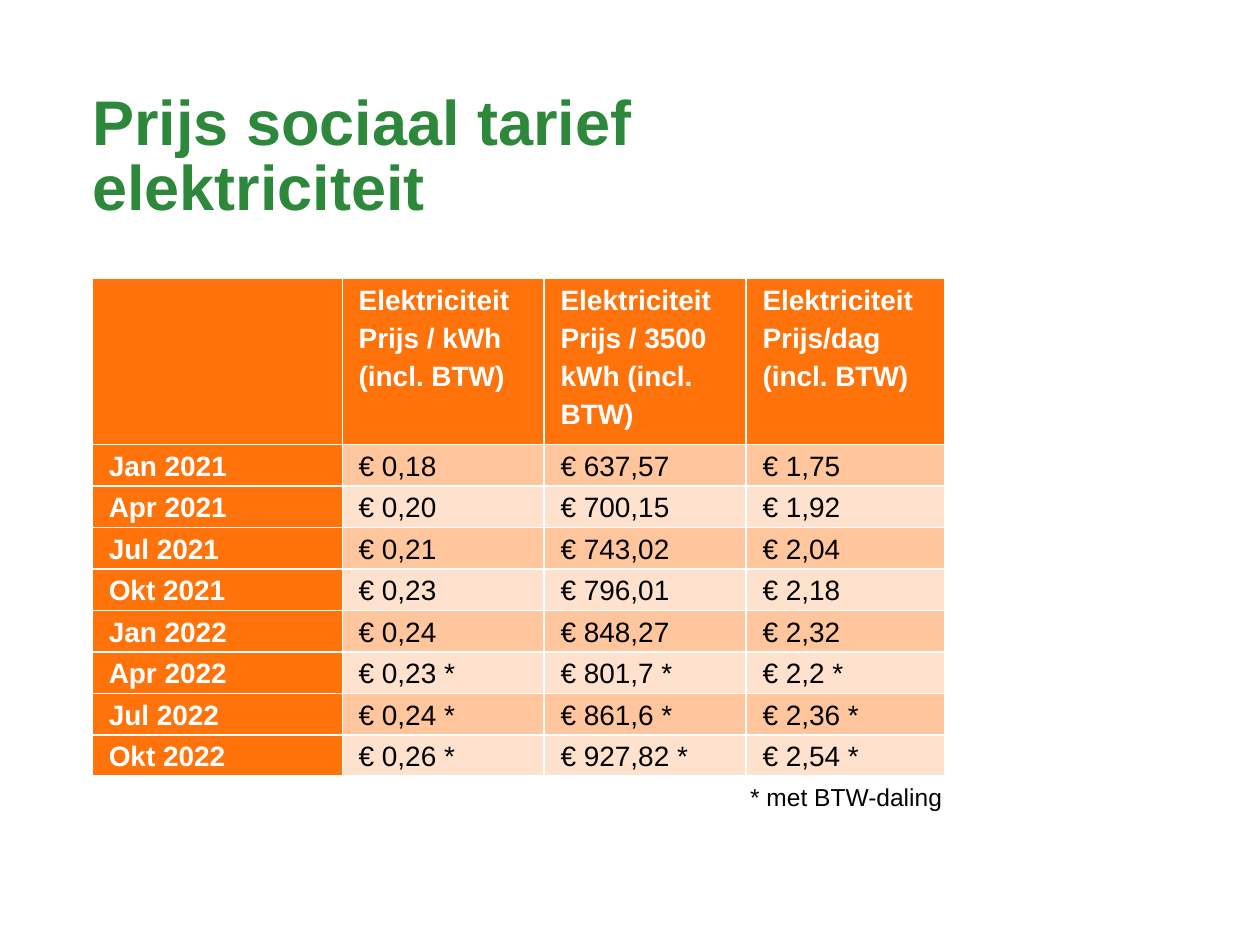
from dataclasses import dataclass

from lxml import etree
from pptx import Presentation
from pptx.dml.color import RGBColor
from pptx.enum import text
from pptx.oxml import ns
from pptx.slide import Slide
from pptx.util import Pt

GREEN, ORANGE, WHITE, BLACK = "2D883C", "FF730A", "FFFFFF", "000000"
BANDS = ["FFC69D", "FFE2CE"]
LEFT, WIDTH = 52.8, 487.2
COLUMN_WIDTHS = [142.8, 115.4, 115.4, 113.6]
HEADER_HEIGHT, ROW_HEIGHT = 94.8, 23.7
HEADER = [
    "",
    "Elektriciteit\nPrijs / kWh (incl. BTW)",
    "Elektriciteit\nPrijs / 3500 kWh (incl. BTW)",
    "Elektriciteit\nPrijs/dag (incl. BTW)",
]
PRICES = [
    ["Jan 2021", "€ 0,18", "€ 637,57", "€ 1,75"],
    ["Apr 2021", "€ 0,20", "€ 700,15", "€ 1,92"],
    ["Jul 2021", "€ 0,21", "€ 743,02", "€ 2,04"],
    ["Okt 2021", "€ 0,23", "€ 796,01", "€ 2,18"],
    ["Jan 2022", "€ 0,24", "€ 848,27", "€ 2,32"],
    ["Apr 2022", "€ 0,23 *", "€ 801,7 *", "€ 2,2 *"],
    ["Jul 2022", "€ 0,24 *", "€ 861,6 *", "€ 2,36 *"],
    ["Okt 2022", "€ 0,26 *", "€ 927,82 *", "€ 2,54 *"],
]


def color(value):
    return RGBColor.from_string(value)


@dataclass
class SlideBuilder:
    """Adds styled elements to the current slide."""

    slide: Slide
    font_name: str = "Arial"

    def format_text(self, frame, size, value, bold=False, spacing=None):
        for paragraph in frame.paragraphs:
            paragraph.line_spacing = spacing
            paragraph.alignment = text.PP_ALIGN.LEFT
            font = paragraph.font
            font.name, font.size, font.bold = self.font_name, Pt(size), bold
            font.color.rgb = color(value)

    def title(self, wording, left, top, width, height):
        shape = self.slide.shapes.title
        shape.left, shape.top = Pt(left), Pt(top)
        shape.width, shape.height = Pt(width), Pt(height)
        frame = shape.text_frame
        frame.text = wording
        frame.word_wrap = True
        frame.auto_size = text.MSO_AUTO_SIZE.NONE
        frame.vertical_anchor = text.MSO_ANCHOR.MIDDLE
        frame.margin_left = frame.margin_right = 0
        frame.margin_top = frame.margin_bottom = 0
        self.format_text(frame, 36, GREEN, bold=True, spacing=0.86)

    def borders(self, cell, sides):
        properties = cell._tc.get_or_add_tcPr()
        for index, side in enumerate(side for side in "LRTB" if side in sides):
            line = etree.Element(ns.qn(f"a:ln{side}"), w=str(Pt(1)))
            fill = etree.SubElement(line, ns.qn("a:solidFill"))
            etree.SubElement(fill, ns.qn("a:srgbClr"), val=WHITE)
            properties.insert(index, line)

    def cell(self, cell, wording, fill, value, bold, sides):
        cell.text = wording
        cell.margin_left = cell.margin_right = Pt(9.4)
        cell.margin_top = cell.margin_bottom = 0
        cell.fill.solid()
        cell.fill.fore_color.rgb = color(fill)
        self.format_text(cell.text_frame, 16, value, bold, spacing=1.22)
        self.borders(cell, sides)

    def price_table(self, left, top):
        rows = [HEADER] + PRICES
        height = HEADER_HEIGHT + ROW_HEIGHT * len(PRICES)
        table = self.slide.shapes.add_table(
            len(rows), len(HEADER), Pt(left), Pt(top), Pt(WIDTH), Pt(height)
        ).table
        table.first_col = True
        for column, width in zip(table.columns, COLUMN_WIDTHS):
            column.width = Pt(width)
        last = len(HEADER) - 1
        for i, row in enumerate(rows):
            table.rows[i].height = Pt(ROW_HEIGHT if i else HEADER_HEIGHT)
            for j, wording in enumerate(row):
                heading = i == 0 or j == 0
                fill = ORANGE if heading else BANDS[(i - 1) % 2]
                sides = "LRTB" if i else "TB" + {0: "L", last: "R"}.get(j, "")
                value = WHITE if heading else BLACK
                self.cell(table.cell(i, j), wording, fill, value, heading, sides)

    def note(self, wording, left, top, width, height):
        shape = self.slide.shapes.add_textbox(Pt(left), Pt(top), Pt(width), Pt(height))
        frame = shape.text_frame
        frame.text = wording
        frame.word_wrap = True
        frame.auto_size = text.MSO_AUTO_SIZE.SHAPE_TO_FIT_TEXT
        self.format_text(frame, 14, BLACK)


def main():
    presentation = Presentation()
    presentation.slide_width, presentation.slide_height = Pt(720), Pt(540)
    builder = SlideBuilder(presentation.slides.add_slide(presentation.slide_layouts[5]))
    builder.title("Prijs sociaal tarief elektriciteit", LEFT, 51.2, WIDTH, 79.2)
    builder.price_table(LEFT, 159.2)
    builder.note("* met BTW-daling", 421.6, 443.6, 227.5, 24.2)
    presentation.save("out.pptx")


if __name__ == "__main__":
    main()
